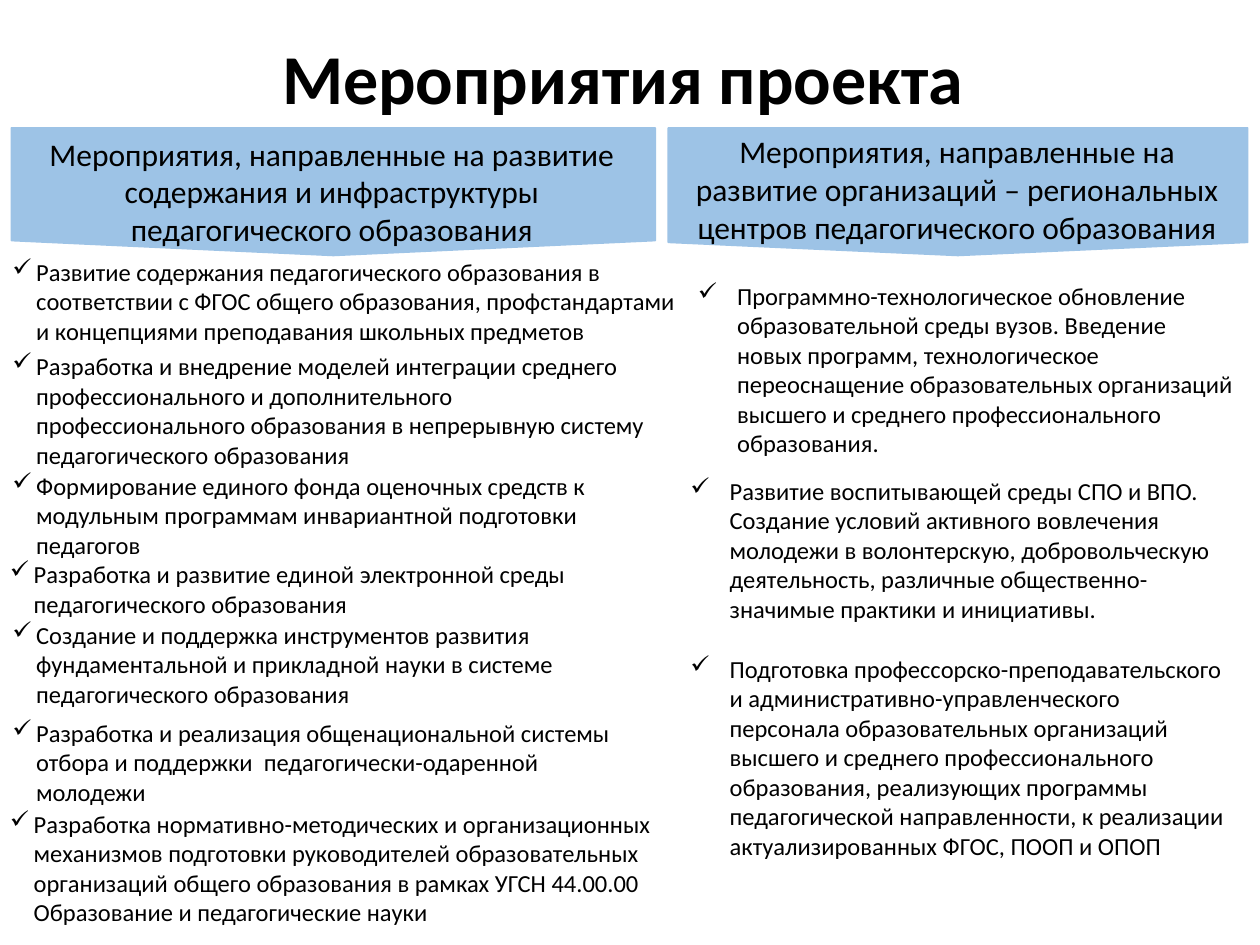
import pptx
import pptx.dml.color
import pptx.enum.shapes
import pptx.enum.text
import pptx.oxml.ns
import pptx.util
from lxml import etree
from pptx.util import Cm

BLACK = pptx.dml.color.RGBColor(0x00, 0x00, 0x00)
BLUE = pptx.dml.color.RGBColor(0x9D, 0xC3, 0xE6)
FONT = "Calibri"
CENTER = pptx.enum.text.PP_ALIGN.CENTER
LEFT = pptx.enum.text.PP_ALIGN.LEFT

# Content; all lengths in centimetres
TITLE = "Мероприятия проекта"
COLUMNS = [
    {
        "heading": "Мероприятия, направленные на развитие содержания и "
                   "инфраструктуры педагогического образования",
        "heading_box": (0.48, 2.59, 12.42),
        "banner": (0.23, 2.58, 12.98),
        "point": 0.117,
        "indent": 0.48,
        # left, top, width, lines, text
        "measures": [
            (0, 5.05, 14.1, 3,
             "Развитие содержания педагогического образования в соответствии с ФГОС общего "
             "образования, профстандартами и концепциями преподавания школьных предметов"),
            (0, 6.96, 13.28, 4,
             "Разработка и внедрение моделей интеграции среднего профессионального и "
             "дополнительного профессионального образования в непрерывную систему "
             "педагогического образования"),
            (0, 9.37, 12.93, 3,
             "Формирование единого фонда оценочных средств к модульным программам "
             "инвариантной подготовки педагогов"),
            (-0.05, 11.15, 12.95, 2,
             "Разработка и развитие единой электронной среды педагогического образования"),
            (0, 12.37, 12.98, 3,
             "Создание и поддержка инструментов развития фундаментальной и прикладной науки "
             "в системе педагогического образования"),
            (0, 14.35, 12.98, 3,
             "Разработка и реализация общенациональной системы отбора и поддержки  "
             "педагогически-одаренной молодежи"),
            (-0.05, 16.18, 14.15, 4,
             "Разработка нормативно-методических и организационных механизмов подготовки "
             "руководителей образовательных организаций общего образования в рамках УГСН "
             "44.00.00 Образование и педагогические науки"),
        ],
    },
    {
        "heading": "Мероприятия, направленные на развитие организаций – региональных "
                   "центров педагогического образования",
        "heading_box": (13.67, 2.54, 11.25),
        "banner": (13.47, 2.58, 11.68),
        "point": 0.103,
        "indent": 0.79,
        "measures": [
            (13.82, 5.54, 11.35, 6,
             "Программно-технологическое обновление образовательной среды вузов. Введение "
             "новых программ, технологическое переоснащение образовательных организаций "
             "высшего и среднего профессионального образования."),
            (13.67, 9.47, 11.5, 5,
             "Развитие воспитывающей среды СПО и ВПО. Создание условий активного вовлечения "
             "молодежи в волонтерскую, добровольческую деятельность, различные "
             "общественно-значимые практики и инициативы."),
            (13.67, 13.06, 11.5, 7,
             "Подготовка профессорско-преподавательского и административно-управленческого "
             "персонала образовательных организаций высшего и среднего профессионального "
             "образования, реализующих программы педагогической направленности, к реализации "
             "актуализированных ФГОС, ПООП и ОПОП"),
        ],
    },
]
BANNER_DEPTH = 2.57
HEADING_HEIGHT = 2.57
LINE_HEIGHT = 0.6
BOX_MARGINS = 0.25


def format_text(paragraph, size, align, bold=False):
    paragraph.alignment = align
    for run in paragraph.runs:
        run.font.name = FONT
        run.font.size = pptx.util.Pt(size)
        run.font.bold = bold
        run.font.color.rgb = BLACK


def add_text(slide, box, text, size, align):
    frame = slide.shapes.add_textbox(*map(Cm, box)).text_frame
    frame.word_wrap = True
    frame.text = text
    format_text(frame.paragraphs[0], size, align)
    return frame.paragraphs[0]


def add_check_mark(paragraph, indent):
    properties = paragraph._p.get_or_add_pPr()
    properties.set("marL", str(Cm(indent)))
    properties.set("indent", str(-Cm(indent)))
    mark = etree.SubElement(properties, pptx.oxml.ns.qn("a:buChar"))
    mark.set("char", "✓")


def add_banner(slide, left, top, width, point):
    # A pentagon turned to point down: its own width is the banner's depth
    shift = (width - BANNER_DEPTH) / 2
    banner = slide.shapes.add_shape(
        pptx.enum.shapes.MSO_SHAPE.PENTAGON,
        Cm(left + shift), Cm(top - shift), Cm(BANNER_DEPTH), Cm(width))
    banner.rotation = 90
    banner.adjustments[0] = point
    banner.shadow.inherit = False
    banner.fill.solid()
    banner.fill.fore_color.rgb = BLUE
    banner.line.color.rgb = BLUE
    banner.line.width = pptx.util.Pt(1)


def main():
    deck = pptx.Presentation()
    deck.slide_width, deck.slide_height = Cm(25.4), Cm(19.05)
    slide = deck.slides.add_slide(deck.slide_layouts[5])

    # Title
    title = slide.shapes.title
    title.left, title.top, title.width, title.height = map(Cm, (1.6, 0.2, 21.9, 2.9))
    title.text_frame.text = TITLE
    title.text_frame.vertical_anchor = pptx.enum.text.MSO_ANCHOR.MIDDLE
    title.text_frame.paragraphs[0].line_spacing = 0.9
    format_text(title.text_frame.paragraphs[0], 40, CENTER, bold=True)

    # Columns: banner, heading, then the checked measures
    for column in COLUMNS:
        add_banner(slide, *column["banner"], column["point"])
        add_text(slide, (*column["heading_box"], HEADING_HEIGHT),
                 column["heading"], 18, CENTER)
        for left, top, width, lines, text in column["measures"]:
            height = lines * LINE_HEIGHT + BOX_MARGINS
            measure = add_text(slide, (left, top, width, height), text, 14, LEFT)
            add_check_mark(measure, column["indent"])

    deck.save("out.pptx")


if __name__ == "__main__":
    main()
